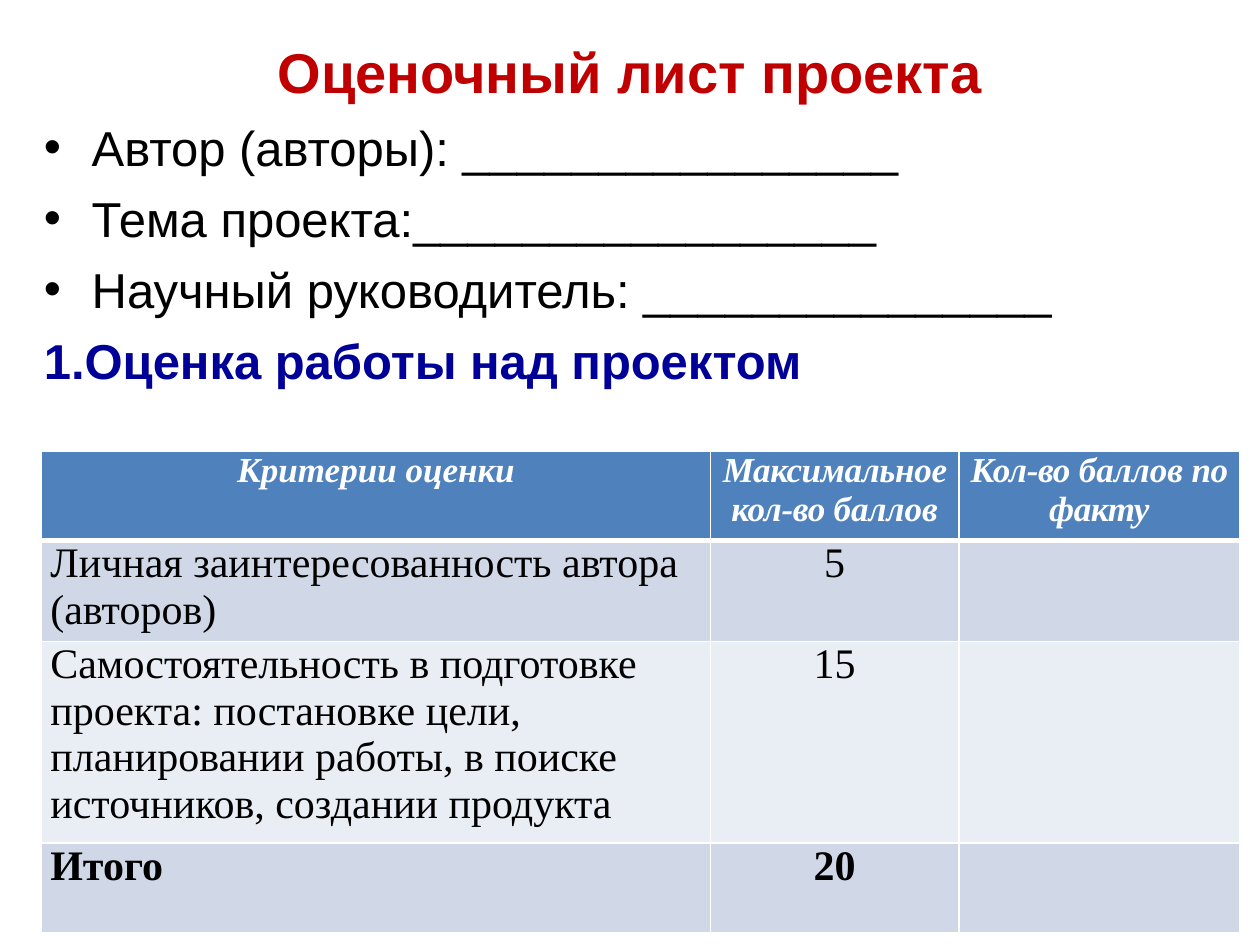
from lxml.etree import SubElement as Sub
from pptx import Presentation
from pptx.dml.color import RGBColor as RGB
from pptx.enum.text import PP_ALIGN as Align
from pptx.oxml.ns import qn
from pptx.util import Inches, Pt

RED = RGB(0xC0, 0x00, 0x00)
NAVY = RGB(0x00, 0x00, 0x99)
BLACK = RGB(0x00, 0x00, 0x00)
WHITE = RGB(0xFF, 0xFF, 0xFF)
BLUE = RGB(0x4F, 0x81, 0xBD)
DARK = RGB(0xD0, 0xD8, 0xE8)
LIGHT = RGB(0xE9, 0xED, 0xF4)

LINES = [
    # text, size, colour, bold, bullet
    ("Оценочный лист проекта", 32, RED, True, False),
    ("Автор (авторы): " + "_" * 16, 28, BLACK, False, True),
    ("Тема проекта:" + "_" * 17, 28, BLACK, False, True),
    ("Научный руководитель: " + "_" * 15, 28, BLACK, False, True),
    ("1.Оценка работы над проектом", 28, NAVY, True, False),
]
ROWS = [
    ("Критерии оценки", "Максимальное кол-во баллов", "Кол-во баллов по факту"),
    ("Личная заинтересованность автора (авторов)", "5", ""),
    ("Самостоятельность в подготовке проекта: постановке цели, "
     "планировании работы, в поиске источников, создании продукта", "15", ""),
    ("Итого", "20", ""),
]
WIDTHS = (5.31, 1.97, 2.23)
HEIGHTS = (0.71, 0.75, 1.5, 0.71)
KEY = "баллов"


class Sheet:
    head = "Arial"
    body = "Times New Roman"

    def __init__(self, slide):
        self.slide = slide

    def style(self, run, font, size, color, bold=False, italic=False):
        run.font.name = font
        run.font.size = Pt(size)
        run.font.color.rgb = color
        run.font.bold = bold
        run.font.italic = italic

    def text(self, left, top, width, height, lines):
        box = self.slide.shapes.add_textbox(
            Inches(left), Inches(top), Inches(width), Inches(height))
        frame = box.text_frame
        frame.word_wrap = True
        frame.text = "\n".join(line[0] for line in lines)
        for para, (_, size, color, bold, bullet) in zip(frame.paragraphs, lines):
            para.space_before = Pt(7)
            self.style(para.runs[0], self.head, size, color, bold)
            self.indent(para, bullet)
        frame.paragraphs[0].alignment = Align.CENTER

    def indent(self, para, bullet):
        props = para._p.get_or_add_pPr()
        props.set("marL", str(Inches(0.38)))
        props.set("indent", str(-Inches(0.38)))
        if bullet:
            Sub(props, qn("a:buFont"), typeface="Arial")
            Sub(props, qn("a:buChar"), char="•")
        else:
            Sub(props, qn("a:buNone"))

    def border(self, cell, **sides):
        props = cell._tc.get_or_add_tcPr()
        for side in "LRTB":
            line = Sub(props, qn("a:ln" + side), w=str(Pt(sides.get(side, 1))))
            fill = Sub(line, qn("a:solidFill"))
            Sub(fill, qn("a:srgbClr"), val=str(WHITE))

    def label(self, para, text):
        # Header words are set slightly tighter, except the key word
        for part in filter(None, text.partition(KEY)):
            run = para.add_run()
            run.text = part
            self.style(run, self.body, 20, WHITE, True, True)
            if KEY in text and part != KEY:
                run._r.get_or_add_rPr().set("spc", "-20")

    def table(self, left, top, rows, widths, heights):
        grid = self.slide.shapes.add_table(
            len(rows), len(widths), Inches(left), Inches(top),
            Inches(sum(widths)), Inches(sum(heights))).table
        for col, width in zip(grid.columns, widths):
            col.width = Inches(width)
        for row, height in zip(grid.rows, heights):
            row.height = Inches(height)
        last = len(rows) - 1
        for r, row in enumerate(rows):
            for c, text in enumerate(row):
                cell = grid.cell(r, c)
                cell.margin_left = cell.margin_right = Inches(0.07)
                cell.margin_top = cell.margin_bottom = 0
                self.border(cell, B=3 if r == 0 else 1, T=3 if r == 1 else 1)
                cell.fill.solid()
                cell.fill.fore_color.rgb = (
                    BLUE if r == 0 else DARK if r % 2 else LIGHT)
                para = cell.text_frame.paragraphs[0]
                if r == 0 or c > 0:
                    para.alignment = Align.CENTER
                if r == 0:
                    self.label(para, text)
                elif text:
                    para.text = text
                    self.style(para.runs[0], self.body, 24, BLACK, r == last)


def main():
    deck = Presentation()
    deck.slide_width, deck.slide_height = Inches(10), Inches(7.5)
    sheet = Sheet(deck.slides.add_slide(deck.slide_layouts[6]))

    # Title and form lines
    sheet.text(0.25, 0.25, 9.5, 6.45, LINES)

    # Score table
    sheet.table(0.33, 3.58, ROWS, WIDTHS, HEIGHTS)

    deck.save("out.pptx")


if __name__ == "__main__":
    main()
